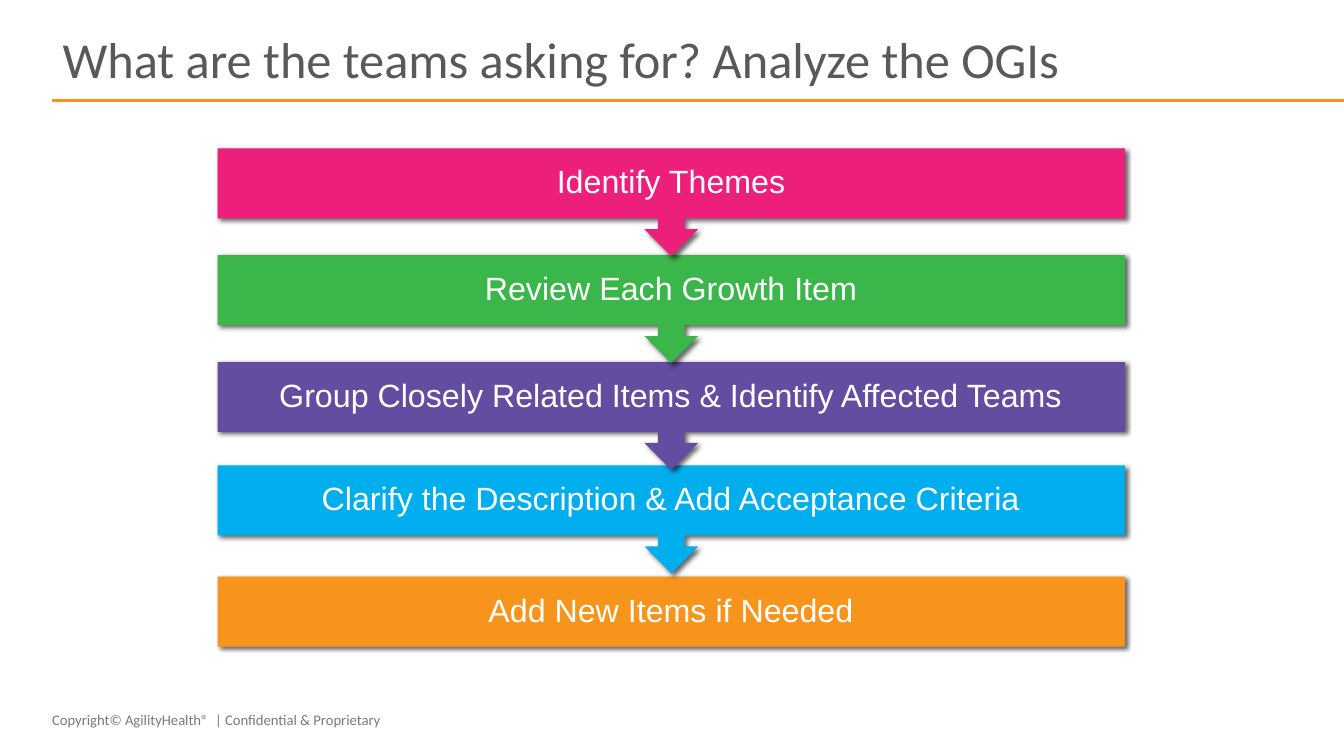
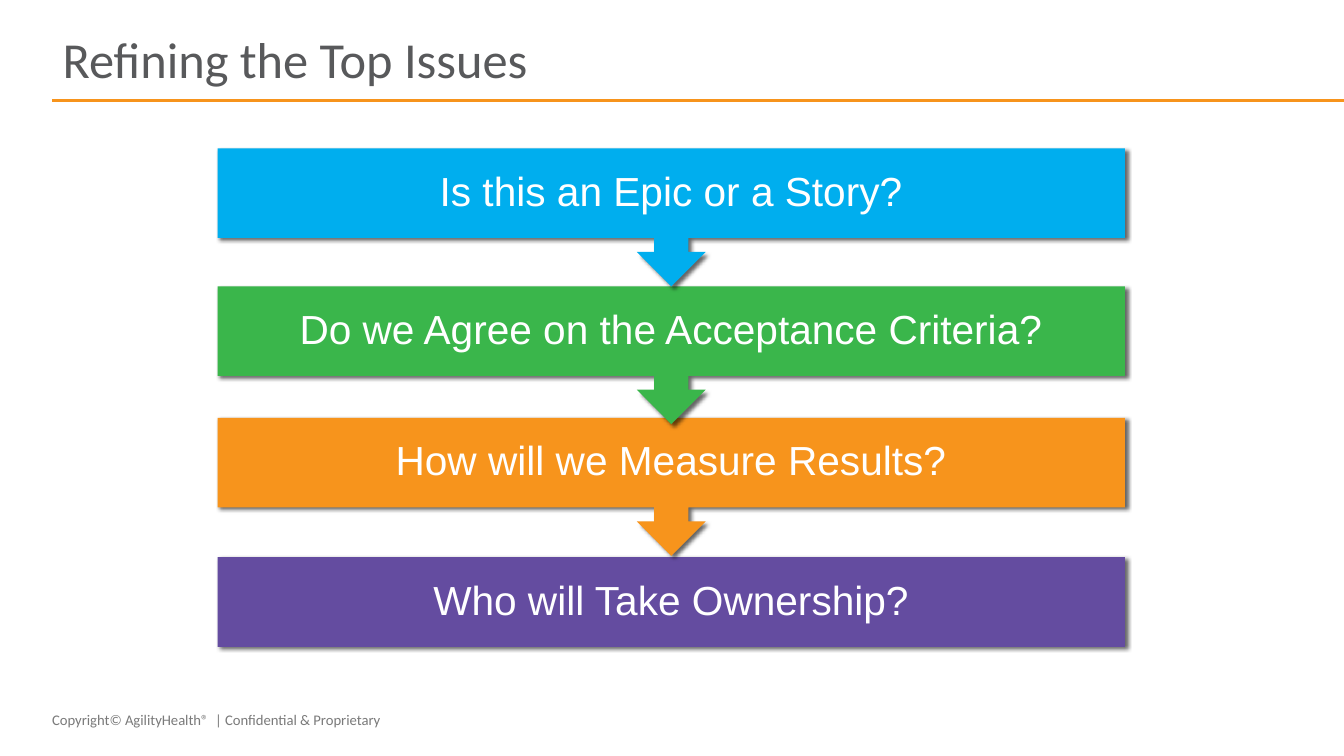
from lxml import etree
from pptx import Presentation
from pptx.dml.color import RGBColor
from pptx.enum import shapes, text
from pptx.oxml import ns
from pptx.util import Pt

PINK, GREEN, PURPLE, BLUE, ORANGE = "EC207B", "3AB64B", "644CA0", "00AEEE", "F7941C"
TITLE_GREY, FOOTER_GREY, WHITE = "58595B", "7A7A7A", "FFFFFF"
SLIDE_W, SLIDE_H = 960, 540
TITLE_BOX = (37.5, 19.5, 885, 50.4)
FLOW_BOX = (155.5, 106, 648, 356)
BAND_SHARE = 0.65  # part of a callout's height above its arrow


def rgb(value):
    return RGBColor.from_string(value)


def add_run(p, words, font, size, color):
    r = p.add_run()
    r.text = words
    r.font.name, r.font.size = font, Pt(size)
    r.font.color.rgb = rgb(color)


def set_shadow(sp):
    """Give the shape a soft black shadow to its lower right."""
    sp.shadow.inherit = False
    effects = sp._element.spPr.find(ns.qn("a:effectLst"))
    outer = etree.SubElement(effects, ns.qn("a:outerShdw"), blurRad=str(Pt(3)),
                             dist=str(Pt(2)), dir="2700000", algn="tl", rotWithShape="0")
    black = etree.SubElement(outer, ns.qn("a:srgbClr"), val="000000")
    etree.SubElement(black, ns.qn("a:alpha"), val="60000")


def add_frame(layout, s):
    """Draw the rule and footer, then move them from the slide to its layout."""
    rule = s.shapes.add_connector(shapes.MSO_CONNECTOR.STRAIGHT,
                                  Pt(TITLE_BOX[0]), Pt(72), Pt(SLIDE_W), Pt(72))
    rule.line.color.rgb, rule.line.width = rgb(ORANGE), Pt(2)
    etree.SubElement(rule._element.spPr, ns.qn("a:effectLst"))

    footer = s.shapes.add_textbox(Pt(30.2), Pt(504), Pt(324), Pt(20))
    tf = footer.text_frame
    tf.word_wrap = True
    add_run(tf.paragraphs[0], "Copyright© AgilityHealth®  | Confidential & Proprietary",
            "Calibri", 10.5, FOOTER_GREY)
    for part in (rule, footer):
        layout.shapes.element.append(part._element)


def set_title(s, words):
    sp = s.shapes.title
    sp.left, sp.top, sp.width, sp.height = map(Pt, TITLE_BOX)
    tf = sp.text_frame
    tf.auto_size = text.MSO_AUTO_SIZE.NONE
    tf.vertical_anchor = text.MSO_ANCHOR.MIDDLE
    p = tf.paragraphs[0]
    p.alignment, p.line_spacing = text.PP_ALIGN.LEFT, 0.9
    add_run(p, words, "Calibri", 36, TITLE_GREY)


def add_step(s, box, kind, words, color, size):
    sp = s.shapes.add_shape(kind, *map(Pt, box))
    sp.fill.solid()
    sp.fill.fore_color.rgb = rgb(color)
    sp.line.fill.background()
    set_shadow(sp)
    tf = sp.text_frame
    tf.word_wrap = True
    tf.margin_top = tf.margin_bottom = 0
    tf.vertical_anchor = text.MSO_ANCHOR.MIDDLE
    p = tf.paragraphs[0]
    p.alignment, p.line_spacing = text.PP_ALIGN.CENTER, 0.9
    add_run(p, words, "Arial", size, WHITE)


def add_flow(s, box, steps, callout_h, size):
    """Stack the steps from last to first, so that each arrow lies over the next band."""
    left, top, width, height = box
    band_h = callout_h * BAND_SHARE
    *leading, (words, color) = [step[:2] for step in steps]
    add_step(s, (left, top + height - band_h, width, band_h),
             shapes.MSO_SHAPE.RECTANGLE, words, color, size)
    for (words, color), (_, _, offset) in reversed(list(zip(leading, steps))):
        add_step(s, (left, top + offset, width, callout_h),
                 shapes.MSO_SHAPE.DOWN_ARROW_CALLOUT, words, color, size)


# Title, callout height, text size, steps (words, colour, offset from the flow's top)
SLIDES = [
    ("What are the teams asking for? Analyze the OGIs", 77, 23, [
        ("Identify Themes", PINK, 0),
        ("Review Each Growth Item", GREEN, 76.3),
        ("Group Closely Related Items & Identify Affected Teams", PURPLE, 152.6),
        ("Clarify the Description & Add Acceptance Criteria", BLUE, 226.5),
        ("Add New Items if Needed", ORANGE, None),
    ]),
    ("Refining the Top Issues", 98.5, 29, [
        ("Is this an Epic or a Story?", BLUE, 0),
        ("Do we Agree on the Acceptance Criteria?", GREEN, 98.5),
        ("How will we Measure Results?", ORANGE, 192.5),
        ("Who will Take Ownership?", PURPLE, None),
    ]),
]


def main():
    prs = Presentation()
    prs.slide_width, prs.slide_height = Pt(SLIDE_W), Pt(SLIDE_H)
    layout = prs.slide_layouts.get_by_name("Title Only")
    for i, (title, callout_h, size, steps) in enumerate(SLIDES):
        s = prs.slides.add_slide(layout)
        if i == 0:
            add_frame(layout, s)
        set_title(s, title)
        add_flow(s, FLOW_BOX, steps, callout_h, size)
    prs.save("out.pptx")


if __name__ == "__main__":
    main()
